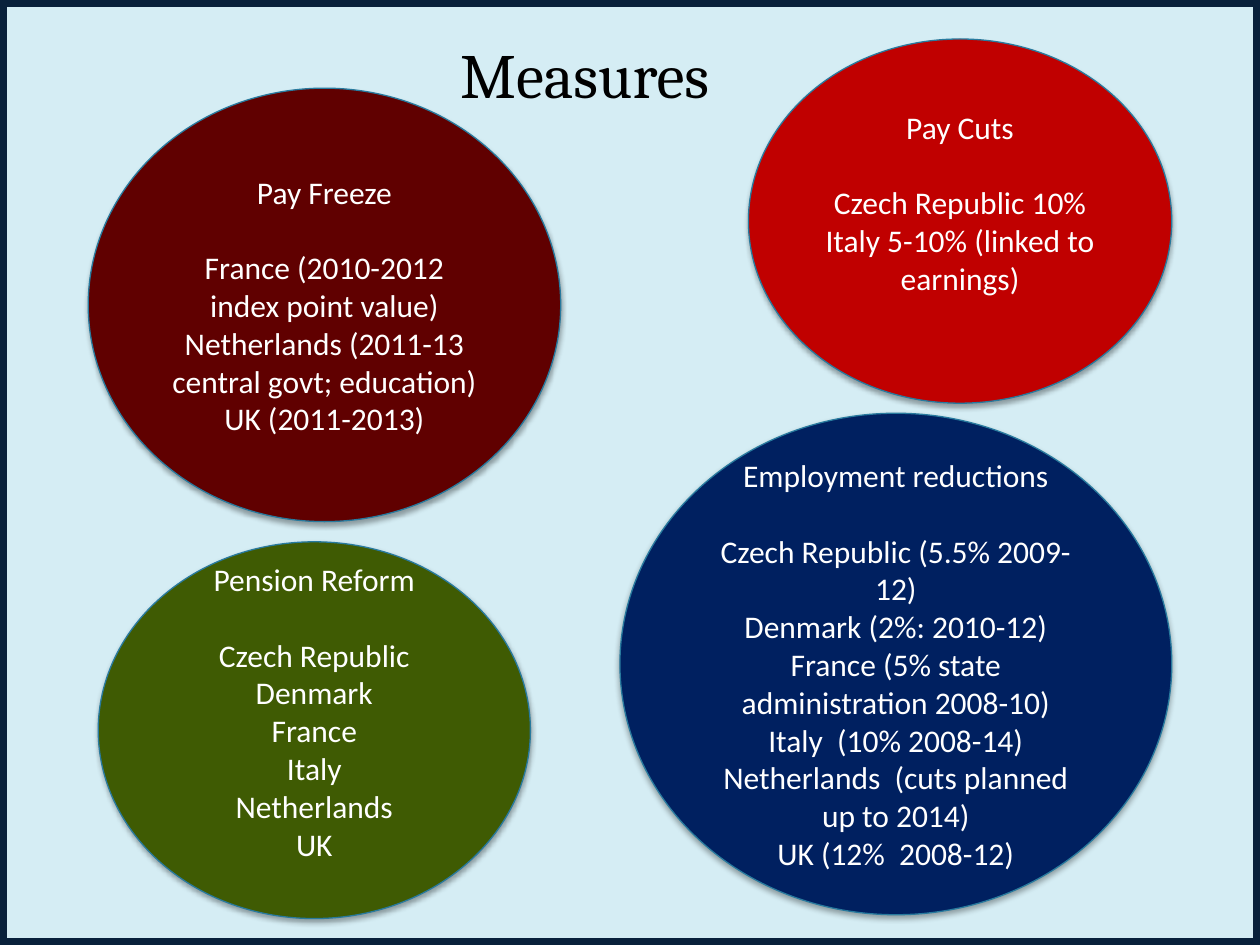
from lxml import etree
from pptx import Presentation
from pptx.dml.color import RGBColor
from pptx.enum.shapes import MSO_SHAPE
from pptx.enum.text import MSO_ANCHOR, PP_ALIGN
from pptx.oxml import parse_xml
from pptx.oxml.ns import nsdecls, qn
from pptx.util import Inches, Pt

OVAL, RECT = MSO_SHAPE.OVAL, MSO_SHAPE.RECTANGLE
MIDDLE, CENTER = MSO_ANCHOR.MIDDLE, PP_ALIGN.CENTER
TITLE_ONLY = 5

COLORS = {
    "background": "D5EDF4", "border": "09213B", "outline": "287A9E",
    "title": "000000", "text": "FFFFFF", "shadow": "000000",
    "freeze": "600000", "cuts": "C00000",
    "pension": "3F5B03", "employment": "002060",
}
LINE_HEIGHT = 0.3  # inches, one line of 18 pt body text

# colour, (left, top, width, height), blank lines below, heading, items
MEASURES = [
    ("freeze", (0.7, 0.7, 3.75, 3.44), 0, "Pay Freeze",
     ["France (2010-2012 index point value)",
      "Netherlands (2011-13 central govt; education)",
      "UK (2011-2013)"]),
    ("cuts", (5.94, 0.31, 3.36, 2.89), 1, "Pay Cuts",
     ["Czech Republic 10%", "Italy 5-10% (linked to earnings)"]),
    ("pension", (0.78, 4.3, 3.43, 2.99), 1, "Pension Reform",
     ["Czech Republic", "Denmark", "France", "Italy", "Netherlands", "UK"]),
    ("employment", (4.92, 3.28, 4.38, 3.98), 0, "Employment reductions",
     ["Czech Republic (5.5% 2009-12)", "Denmark (2%: 2010-12)",
      "France (5% state administration 2008-10)", "Italy  (10% 2008-14)",
      "Netherlands  (cuts planned up to 2014)", "UK (12%  2008-12)"]),
]


class SlideBuilder:
    """Holds the slide and the style shared by its elements."""

    def __init__(self, slide):
        self.s = slide
        self.title_font, self.body_font = "Cambria", "Calibri"

    def color(self, name):
        return RGBColor.from_string(COLORS[name])

    def format(self, p, font, size, color):
        p.alignment = CENTER
        p.font.name, p.font.size = font, Pt(size)
        p.font.color.rgb = self.color(color)

    def backdrop(self):
        fill = self.s.background.fill
        fill.solid()
        fill.fore_color.rgb = self.color("background")

    def border(self):
        sp = self.s.shapes.add_shape(RECT, 0, 0, Inches(10), Inches(7.5))
        sp.shadow.inherit = False
        sp.fill.background()
        sp.line.color.rgb = self.color("border")
        sp.line.width = Pt(8)

    def title(self, text):
        sp = self.s.shapes.title
        sp.left, sp.top, sp.width, sp.height = 0, 0, Inches(9), Inches(1.17)
        tf = sp.text_frame
        tf.text = text
        tf.vertical_anchor = MIDDLE
        tf.margin_left = Inches(0.38)
        self.format(tf.paragraphs[0], self.title_font, 36, "title")

    def soft_shadow(self, sp):
        sp.shadow.inherit = False
        effects = sp._element.spPr.find(qn("a:effectLst"))
        shadow = parse_xml(
            f'<a:outerShdw {nsdecls("a")} blurRad="{Pt(3.1)}" dist="{Pt(1.8)}" '
            'dir="5400000" rotWithShape="0"/>')
        clr = etree.SubElement(shadow, qn("a:srgbClr"), val=COLORS["shadow"])
        etree.SubElement(clr, qn("a:alpha"), val="35000")
        effects.append(shadow)

    def bubble(self, color, box, lines_below, heading, items):
        sp = self.s.shapes.add_shape(OVAL, *map(Inches, box))
        sp.fill.solid()
        sp.fill.fore_color.rgb = self.color(color)
        sp.line.color.rgb = self.color("outline")
        sp.line.width = Pt(0.75)
        self.soft_shadow(sp)
        tf = sp.text_frame
        tf.word_wrap = True
        tf.vertical_anchor = MIDDLE
        tf.margin_bottom = Inches(0.05 + lines_below * LINE_HEIGHT)
        tf.text = "\n".join([heading] + items)
        for p in tf.paragraphs:
            self.format(p, self.body_font, 18, "text")
        tf.paragraphs[0].space_after = Inches(LINE_HEIGHT)


def main():
    prs = Presentation()
    prs.slide_width, prs.slide_height = Inches(10), Inches(7.5)
    builder = SlideBuilder(prs.slides.add_slide(prs.slide_layouts[TITLE_ONLY]))
    builder.backdrop()
    builder.border()
    builder.title("Measures")
    for measure in MEASURES:
        builder.bubble(*measure)
    prs.save("out.pptx")


if __name__ == "__main__":
    main()
